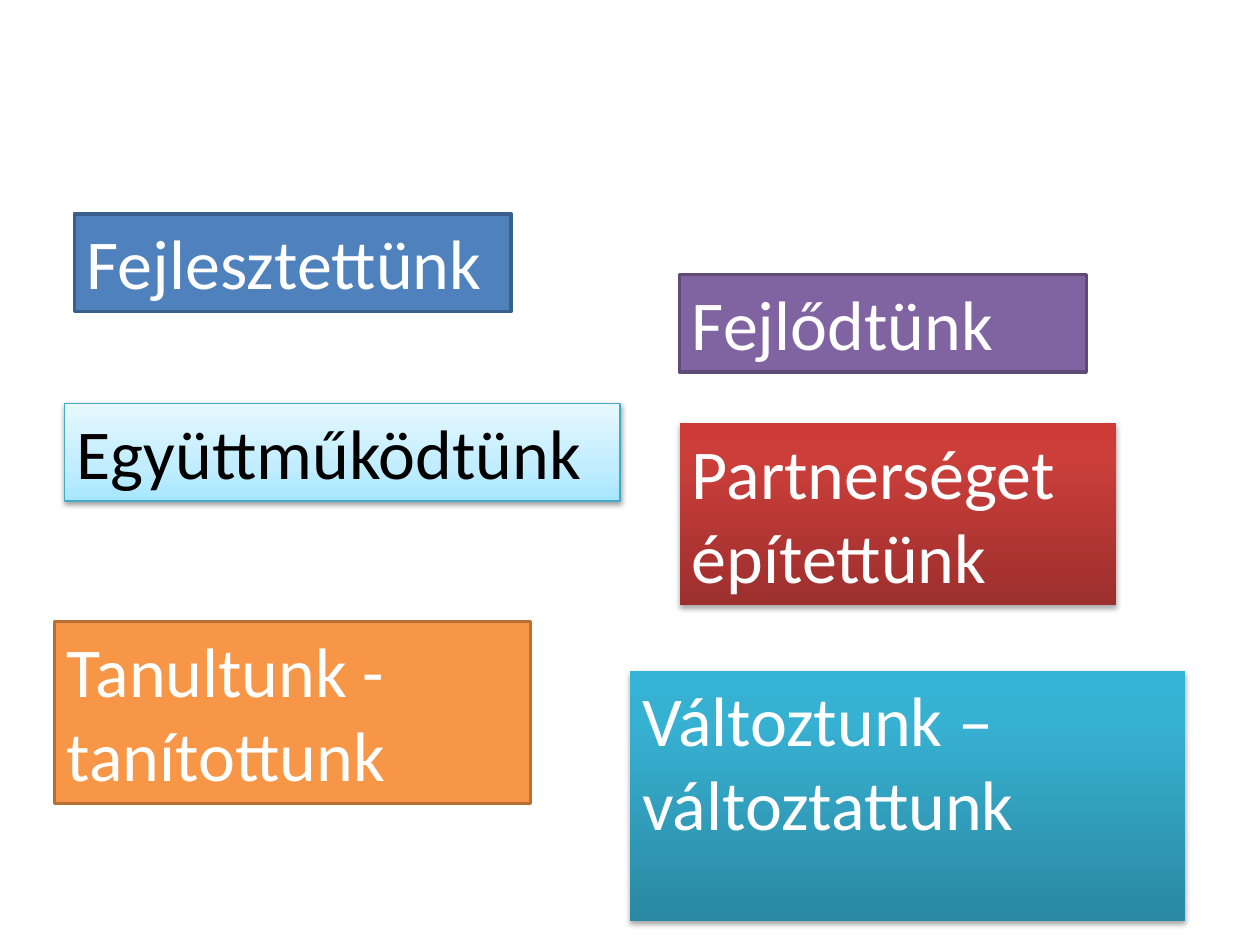
import pptx
import pptx.dml.color
import pptx.enum.shapes
import pptx.enum.text
import pptx.oxml
import pptx.oxml.ns
import pptx.util
from lxml import etree

Cm = pptx.util.Cm
Pt = pptx.util.Pt
RGB = pptx.dml.color.RGBColor
qn = pptx.oxml.ns.qn

WHITE = RGB(0xFF, 0xFF, 0xFF)
BLACK = RGB(0x00, 0x00, 0x00)
BLUE, DARK_BLUE = RGB(0x4F, 0x81, 0xBD), RGB(0x3A, 0x5F, 0x8C)
PURPLE, DARK_PURPLE = RGB(0x80, 0x64, 0xA2), RGB(0x5F, 0x4A, 0x78)
ORANGE, DARK_ORANGE = RGB(0xF7, 0x96, 0x46), RGB(0xB7, 0x6F, 0x34)
AQUA = RGB(0x46, 0xAA, 0xC5)

# Gradients run from bottom to top: (position in %, colour)
PALE_AQUA_FADE = [(0, RGB(0xA7, 0xE6, 0xFF)), (35, RGB(0xC1, 0xED, 0xFF)),
                  (100, RGB(0xE7, 0xF8, 0xFF))]
RED_FADE = [(0, RGB(0x9C, 0x2F, 0x2D)), (80, RGB(0xCB, 0x3E, 0x3A)),
            (100, RGB(0xCE, 0x3B, 0x37))]
AQUA_FADE = [(0, RGB(0x2A, 0x88, 0xA2)), (80, RGB(0x37, 0xB1, 0xD2)),
             (100, RGB(0x34, 0xB4, 0xD6))]

# Shadows: (opacity in %, distance in points)
SOFT_SHADOW = (38, 1.6)
DEEP_SHADOW = (35, 1.8)
SHADOW_BLUR = 3.1

# Text, (left, top, width, height) in cm, fill, (line colour, points), shadow, text colour
ACHIEVEMENTS = [
    ("Fejlesztettünk", (1.5, 4.31, 8.8, 1.97), BLUE, (DARK_BLUE, 2), None, WHITE),
    ("Fejlődtünk", (13.7, 5.53, 8.2, 1.97), PURPLE, (DARK_PURPLE, 2), None, WHITE),
    ("Együttműködtünk", (1.3, 8.13, 11.2, 1.97), PALE_AQUA_FADE, (AQUA, 0.75),
     SOFT_SHADOW, BLACK),
    ("Partnerséget építettünk", (13.7, 8.53, 8.8, 3.67), RED_FADE, None,
     DEEP_SHADOW, WHITE),
    ("Tanultunk - tanítottunk", (1.1, 12.53, 9.6, 3.67), ORANGE, (DARK_ORANGE, 2),
     None, WHITE),
    ("Változtunk – változtattunk", (12.7, 13.52, 11.2, 5.05), AQUA_FADE, None,
     DEEP_SHADOW, WHITE),
]

FRAME_FORMAT = {
    "word_wrap": True,
    "auto_size": pptx.enum.text.MSO_AUTO_SIZE.NONE,
    "vertical_anchor": pptx.enum.text.MSO_ANCHOR.TOP,
}
FONT_FORMAT = {"name": "Calibri", "size": Pt(40)}


def apply_format(target, values):
    for attribute, value in values.items():
        setattr(target, attribute, value)


def fill_gradient(box, stops):
    box.fill.gradient()
    box.fill.gradient_angle = 90
    stop_list = box.fill._xPr.find(qn("a:gradFill")).find(qn("a:gsLst"))
    for old_stop in list(stop_list):
        stop_list.remove(old_stop)
    for position, color in stops:
        stop = etree.SubElement(stop_list, qn("a:gs"), pos=str(position * 1000))
        etree.SubElement(stop, qn("a:srgbClr"), val=str(color))


def add_shadow(box, opacity, distance):
    effects = box._element.spPr.find(qn("a:effectLst"))
    shadow = etree.SubElement(
        effects, qn("a:outerShdw"), blurRad=str(Pt(SHADOW_BLUR)),
        dist=str(Pt(distance)), dir="5400000", rotWithShape="0")
    color = etree.SubElement(shadow, qn("a:srgbClr"), val=str(BLACK))
    etree.SubElement(color, qn("a:alpha"), val=str(opacity * 1000))


def add_achievement(slide, text, place, fill, line, shadow, text_color):
    box = slide.shapes.add_shape(
        pptx.enum.shapes.MSO_SHAPE.RECTANGLE, *(Cm(length) for length in place))

    # Fill and outline
    if isinstance(fill, list):
        fill_gradient(box, fill)
    else:
        box.fill.solid()
        box.fill.fore_color.rgb = fill
    if line:
        line_color, line_width = line
        box.line.color.rgb = line_color
        box.line.width = Pt(line_width)
    else:
        box.line.fill.background()

    # Shadow
    box.shadow.inherit = False
    if shadow:
        add_shadow(box, *shadow)

    # Text
    apply_format(box.text_frame, FRAME_FORMAT)
    paragraph = box.text_frame.paragraphs[0]
    paragraph.alignment = pptx.enum.text.PP_ALIGN.LEFT
    run = paragraph.add_run()
    run.text = text
    apply_format(run.font, FONT_FORMAT)
    run.font.color.rgb = text_color


def main():
    presentation = pptx.Presentation()
    presentation.slide_width = Cm(25.4)
    presentation.slide_height = Cm(19.05)
    slide = presentation.slides.add_slide(presentation.slide_layouts[6])
    for achievement in ACHIEVEMENTS:
        add_achievement(slide, *achievement)
    presentation.save("out.pptx")


if __name__ == "__main__":
    main()
